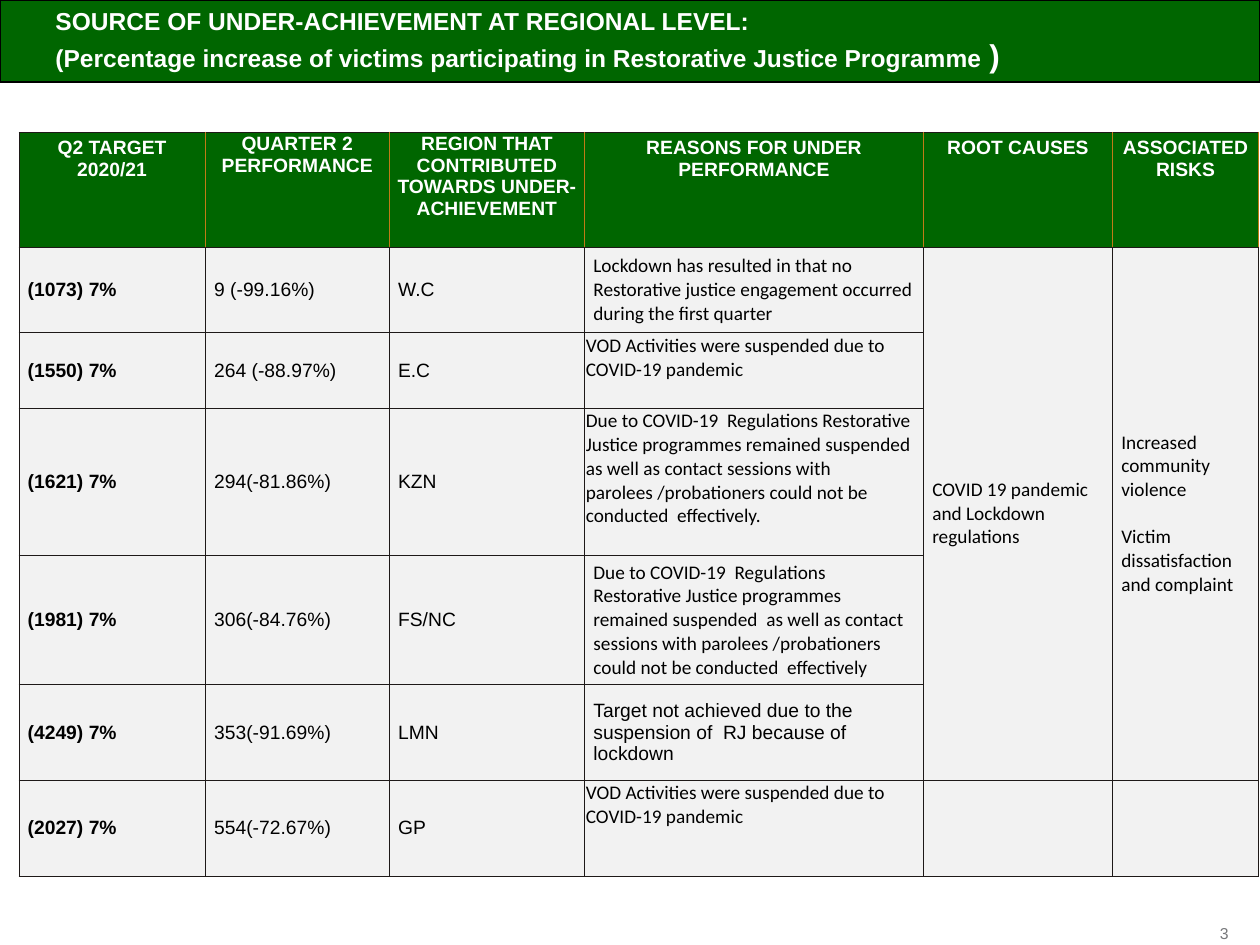
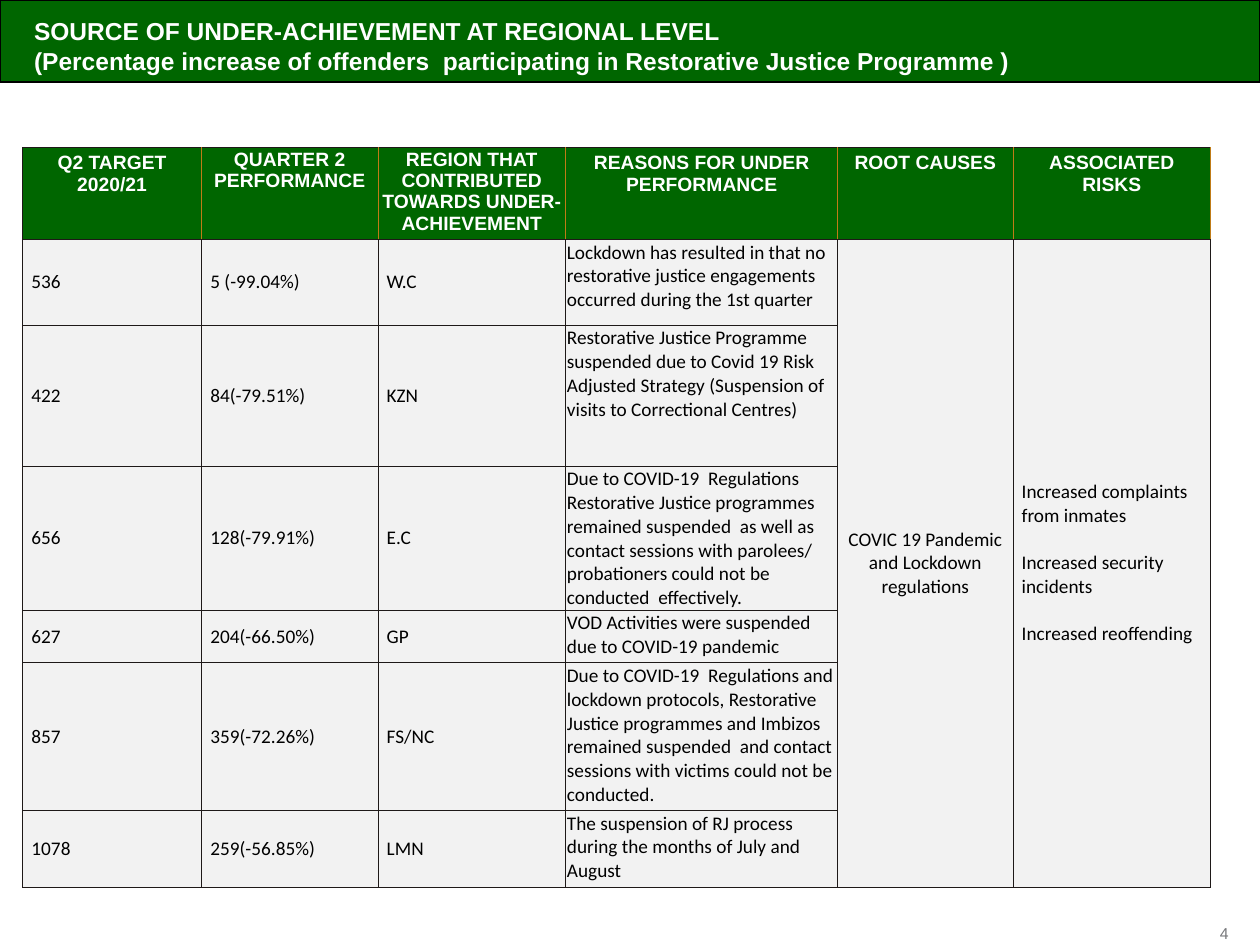
from lxml import etree
from pptx import Presentation
from pptx.dml.color import RGBColor
from pptx.enum import shapes, text
from pptx.oxml import ns
from pptx.util import Inches, Pt

GREEN, WHITE, BLACK = "006600", "FFFFFF", "000000"
PALE, RULE, GOLD, GREY = "F2F2F2", "1E1918", "BF7B17", "77787B"
TOP, MIDDLE = text.MSO_ANCHOR.TOP, text.MSO_ANCHOR.MIDDLE
LEFT, CENTER, RIGHT = text.PP_ALIGN.LEFT, text.PP_ALIGN.CENTER, text.PP_ALIGN.RIGHT
PADDED = (0.07, 0.04, 0.07, 0.04)
SNUG = (0.01, 0.01, 0.01, 0)
TIGHT = dict(inset=SNUG, anchor=TOP)

HEADINGS = [
    (["Q2 TARGET 2020/21"], PADDED),
    (["QUARTER 2", "PERFORMANCE"], SNUG),
    (["REGION THAT CONTRIBUTED TOWARDS UNDER-ACHIEVEMENT"], SNUG),
    (["REASONS FOR UNDER", "PERFORMANCE"], PADDED),
    (["ROOT CAUSES"], PADDED),
    (["ASSOCIATED RISKS"], PADDED),
]

VOD = "VOD Activities were suspended due to COVID-19 pandemic"
SUSPENDED = ("Due to COVID-19  Regulations Restorative Justice programmes remained suspended "
             " as well as contact sessions with parolees {} could not be conducted  effectively")

VICTIMS = [
    ("(1073) 7%", "9 (-99.16%)", "W.C",
     "Lockdown has resulted in that no Restorative justice engagement occurred "
     "during the first quarter", {}),
    ("(1550) 7%", "264 (-88.97%)", "E.C", VOD, TIGHT),
    ("(1621) 7%", "294(-81.86%)", "KZN", SUSPENDED.format("/probationers") + ".", TIGHT),
    ("(1981) 7%", "306(-84.76%)", "FS/NC", SUSPENDED.format("/probationers"), {}),
    ("(4249) 7%", "353(-91.69%)", "LMN",
     "Target not achieved due to the suspension of  RJ because of lockdown",
     dict(font="Arial")),
    ("(2027) 7%", "554(-72.67%)", "GP", VOD, TIGHT),
]

OFFENDERS = [
    ("536", "5 (-99.04%)", "W.C",
     "Lockdown has resulted in that no restorative justice engagements occurred "
     "during the 1st quarter", TIGHT),
    ("422", "84(-79.51%)", "KZN",
     "Restorative Justice Programme suspended due to Covid 19 Risk Adjusted Strategy "
     "(Suspension of visits to Correctional Centres)", TIGHT),
    ("656", "128(-79.91%)", "E.C",
     SUSPENDED.format("/ probationers").replace("parolees /", "parolees/") + ".", TIGHT),
    ("627", "204(-66.50%)", "GP", VOD, TIGHT),
    ("857", "359(-72.26%)", "FS/NC",
     "Due to COVID-19  Regulations and lockdown protocols, Restorative Justice programmes "
     "and Imbizos remained suspended  and contact sessions with victims could not be "
     "conducted.", TIGHT),
    ("1078", "259(-56.85%)", "LMN",
     "The suspension of RJ process during the months of July and August", TIGHT),
]


def rgb(value):
    return RGBColor.from_string(value)


def style_font(font, name, size, color, bold):
    font.name, font.size, font.bold = name, Pt(size), bold
    font.color.rgb = rgb(color)


def write(frame, lines, font="Arial", size=11, color=BLACK, bold=False, align=LEFT, gap=0):
    """Put one paragraph per line in the frame, gap points apart."""
    for number, line in enumerate(lines):
        paragraph = frame.add_paragraph() if number else frame.paragraphs[0]
        paragraph.alignment = align
        paragraph.space_before = Pt(gap if number else 0)
        run = paragraph.add_run()
        run.text = line
        style_font(run.font, font, size, color, bold)


def set_borders(cell, sides):
    properties = cell._tc.get_or_add_tcPr()
    for place, (side, color) in enumerate(zip("LRTB", sides)):
        line = etree.Element(ns.qn(f"a:ln{side}"), w=str(Pt(0.5)))
        fill = etree.SubElement(line, ns.qn("a:solidFill"))
        etree.SubElement(fill, ns.qn("a:srgbClr"), val=color)
        properties.insert(place, line)


def fill_cell(cell, lines, fill=PALE, inset=PADDED, anchor=MIDDLE, **fmt):
    (cell.margin_left, cell.margin_top,
     cell.margin_right, cell.margin_bottom) = map(Inches, inset)
    cell.vertical_anchor = anchor
    cell.fill.solid()
    cell.fill.fore_color.rgb = rgb(fill)
    write(cell.text_frame, lines, **fmt)


def add_band(slide, width):
    """Place the title band on the slide's layout, where all slides share it."""
    band = slide.shapes.add_shape(shapes.MSO_SHAPE.RECTANGLE, 0, 0, width, Inches(0.65))
    band.shadow.inherit = False
    band.fill.solid()
    band.fill.fore_color.rgb = rgb(GREEN)
    band.line.color.rgb = rgb(BLACK)
    band.line.width = Pt(1)
    slide.slide_layout.shapes.element.insert(2, band.element)


def set_title(slide, lines, left, top, height):
    title = slide.shapes.title
    title.left, title.top, title.width, title.height = map(Inches, (left, top, 9.66, height))
    frame = title.text_frame
    frame.word_wrap = True
    frame.auto_size = text.MSO_AUTO_SIZE.NONE
    frame.vertical_anchor = TOP
    write(frame, lines, size=14, color=WHITE, bold=True)
    return frame


def add_page_number(slide, number):
    box = slide.shapes.add_textbox(*map(Inches, (9.46, 7.33, 0.29, 0.15)))
    frame = box.text_frame
    frame.word_wrap = True
    frame.vertical_anchor = MIDDLE
    frame.margin_left = frame.margin_top = frame.margin_right = frame.margin_bottom = 0
    write(frame, [str(number)], size=9, color=GREY, align=RIGHT)


def add_regions(slide, left, top, columns, heights, regions, font, bold_targets):
    """Add the table of regions with its heading row; return the table."""
    size = len(heights), len(columns)
    frame = slide.shapes.add_table(*size, *map(Inches, (left, top, sum(columns), sum(heights))))
    table = frame.table
    table.first_row = table.horz_banding = False
    for column, width in zip(table.columns, columns):
        column.width = Inches(width)
    for row, height in zip(table.rows, heights):
        row.height = Inches(height)
    for place, (lines, inset) in enumerate(HEADINGS):
        cell = table.cell(0, place)
        fill_cell(cell, lines, fill=GREEN, inset=inset, anchor=TOP,
                  color=WHITE, bold=True, align=CENTER)
        set_borders(cell, (GOLD if place else RULE, GOLD, RULE, RULE))
    for row, (target, result, region, reason, look) in enumerate(regions, 1):
        fill_cell(table.cell(row, 0), [target], font=font, bold=bold_targets)
        fill_cell(table.cell(row, 1), [result], font=font)
        fill_cell(table.cell(row, 2), [region], font=font)
        fill_cell(table.cell(row, 3), [reason], **{"font": "Calibri", **look})
        for place in (4, 5):
            fill_cell(table.cell(row, place), [])
        for place in range(len(columns)):
            set_borders(table.cell(row, place), [RULE] * 4)
    return table


def add_causes(table, last_row, causes, risks, align):
    """Fill the root cause and risk cells, each merged down to last_row."""
    for place, lines, side in ((4, causes, align), (5, risks, LEFT)):
        cell = table.cell(1, place)
        cell.merge(table.cell(last_row, place))
        fill_cell(cell, lines, font="Calibri", align=side, gap=13.4)


def main():
    prs = Presentation()
    prs.slide_width, prs.slide_height = Inches(10), Inches(7.5)
    layout = prs.slide_layouts[5]

    victims = prs.slides.add_slide(layout)
    add_band(victims, prs.slide_width)
    heading = set_title(victims, [
        "SOURCE OF UNDER-ACHIEVEMENT AT REGIONAL LEVEL:",
        "(Percentage increase of victims participating in Restorative Justice Programme ",
    ], 0.34, 0, 0.94)
    bracket = heading.paragraphs[-1].add_run()
    bracket.text = ")"
    style_font(bracket.font, "Arial", 18, WHITE, True)
    table = add_regions(victims, 0.15, 1.05, [1.48, 1.46, 1.55, 2.69, 1.5, 1.16],
                        [0.91, 0.68, 0.6, 1.17, 0.92, 0.76, 0.76], VICTIMS, "Arial", True)
    add_causes(table, 5, ["COVID 19 pandemic and Lockdown regulations"],
               ["Increased community violence", "Victim dissatisfaction and complaint"], LEFT)
    add_page_number(victims, 3)

    offenders = prs.slides.add_slide(layout)
    set_title(offenders, [
        "SOURCE OF UNDER-ACHIEVEMENT AT REGIONAL LEVEL",
        "(Percentage increase of offenders  participating in Restorative Justice Programme )",
    ], 0.17, 0.08, 0.81)
    table = add_regions(offenders, 0.18, 1.17, [1.42, 1.4, 1.49, 2.16, 1.39, 1.57],
                        [0.73, 0.68, 1.12, 1.12, 0.42, 1.17, 0.61], OFFENDERS, "Calibri", False)
    add_causes(table, 6, ["COVIC 19 Pandemic and Lockdown regulations"],
               ["Increased complaints from inmates", "Increased security incidents",
                "Increased reoffending"], CENTER)
    add_page_number(offenders, 4)

    prs.save("out.pptx")


if __name__ == "__main__":
    main()
